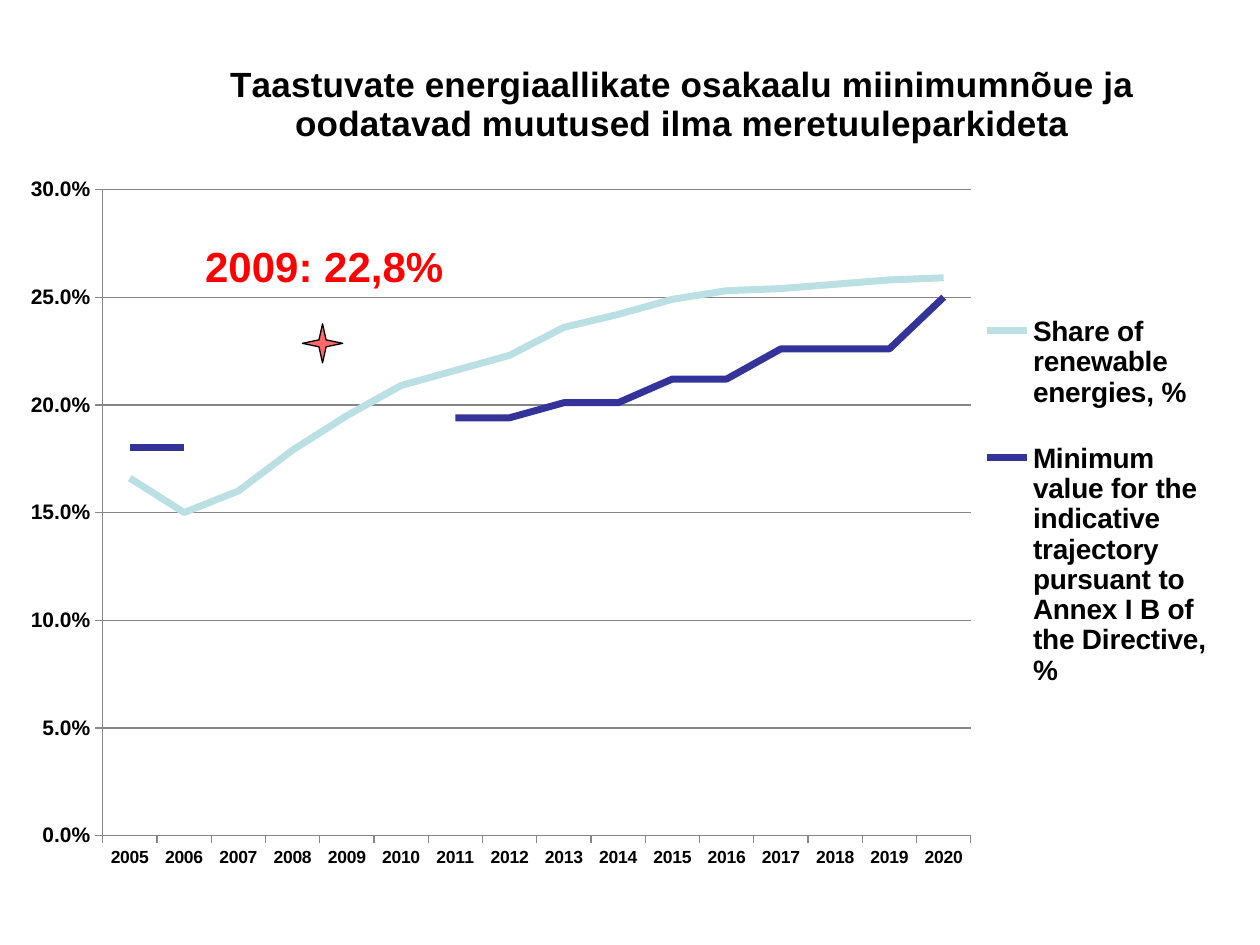
from dataclasses import dataclass

from lxml import etree
from pptx import Presentation
from pptx.chart.data import CategoryChartData
from pptx.dml.color import RGBColor
from pptx.enum.chart import XL_CHART_TYPE as ChartType
from pptx.enum.chart import XL_LEGEND_POSITION as LegendPosition
from pptx.enum.chart import XL_MARKER_STYLE as Marker
from pptx.enum.chart import XL_TICK_MARK as TickMark
from pptx.enum.shapes import MSO_SHAPE as Shape
from pptx.enum.text import MSO_AUTO_SIZE as AutoSize
from pptx.enum.text import PP_ALIGN as Align
from pptx.oxml.ns import qn
from pptx.util import Inches, Pt


@dataclass(frozen=True)
class Theme:
    font: str = "Arial"
    ink: str = "000000"
    accent: str = "FF0000"
    grid: str = "868686"
    share: str = "BBE0E3"
    minimum: str = "333399"
    title_size: int = 20
    legend_size: int = 16
    value_size: int = 12
    year_size: int = 10
    note_size: int = 24


THEME = Theme()
TITLE = ("Taastuvate energiaallikate osakaalu miinimumnõue ja "
         "oodatavad muutused ilma meretuuleparkideta")
YEARS = [str(year) for year in range(2005, 2021)]
SERIES = [
    ("Share of renewable energies, %", THEME.share,
     [0.166, 0.15, 0.16, 0.179, 0.195, 0.209, 0.216, 0.223,
      0.236, 0.242, 0.249, 0.253, 0.254, 0.256, 0.258, 0.259]),
    ("Minimum value for the indicative trajectory pursuant to "
     "Annex I B of the Directive, %", THEME.minimum,
     [0.18, 0.18, None, None, None, None, 0.194, 0.194,
      0.201, 0.201, 0.212, 0.212, 0.226, 0.226, 0.226, 0.25]),
]


def style_font(font, size, color=THEME.ink, bold=True):
    font.name = THEME.font
    font.size = Pt(size)
    font.bold = bold
    font.color.rgb = RGBColor.from_string(color)


def write_text(frame, text, size, color=THEME.ink, align=Align.CENTER):
    para = frame.paragraphs[0]
    para.alignment = align
    span = para.add_run()
    span.text = text
    style_font(span.font, size, color)


def set_layout(parent, index, x, y, w=None, h=None, inner=False):
    """Place a chart part by fractions of the chart area."""
    for old in parent.findall(qn("c:layout")):
        parent.remove(old)
    layout = etree.Element(qn("c:layout"))
    manual = etree.SubElement(layout, qn("c:manualLayout"))
    values = [("xMode", "edge"), ("yMode", "edge"),
              ("x", x), ("y", y), ("w", w), ("h", h)]
    if inner:
        values.insert(0, ("layoutTarget", "inner"))
    for tag, value in values:
        if value is not None:
            etree.SubElement(manual, qn(f"c:{tag}")).set("val", str(value))
    parent.insert(index, layout)


class SlideBuilder:
    def __init__(self, page, theme):
        self.page = page
        self.theme = theme

    def line_chart(self, at, title, categories, series):
        theme = self.theme
        data = CategoryChartData(number_format="0.0%")
        data.categories = categories
        for name, _, values in series:
            data.add_series(name, values)
        chart = self.page.shapes.add_chart(
            ChartType.LINE, *map(Inches, at), data).chart
        style_font(chart.font, theme.year_size)

        # Title
        chart.has_title = True
        write_text(chart.chart_title.text_frame, title, theme.title_size)
        chart.chart_title.include_in_layout = False
        set_layout(chart.element.find(".//" + qn("c:title")), 1, 0.164, 0)

        # Legend
        chart.has_legend = True
        chart.legend.position = LegendPosition.RIGHT
        chart.legend.include_in_layout = False
        style_font(chart.legend.font, theme.legend_size)
        set_layout(chart.element.find(".//" + qn("c:legend")), 1,
                   0.79, 0.27, 0.19, 0.53)

        # Axes
        values, years = chart.value_axis, chart.category_axis
        values.minimum_scale, values.maximum_scale = 0, 0.3
        values.major_unit = 0.05
        values.has_major_gridlines = True
        values.tick_labels.number_format = "0.0%"
        values.tick_labels.number_format_is_linked = False
        for axis, size in ((values, theme.value_size),
                           (years, theme.year_size)):
            axis.major_tick_mark = TickMark.OUTSIDE
            axis.minor_tick_mark = TickMark.NONE
            style_font(axis.tick_labels.font, size)
        for part in (values, years, values.major_gridlines):
            part.format.line.width = Pt(0.75)
            part.format.line.color.rgb = RGBColor.from_string(theme.grid)

        # Lines
        plot = chart.plots[0]
        plot.vary_by_categories = False
        for line, (_, color, _) in zip(plot.series, series):
            line.smooth = False
            line.marker.style = Marker.NONE
            line.format.line.width = Pt(4)
            line.format.line.color.rgb = RGBColor.from_string(color)
        set_layout(chart.element.find(".//" + qn("c:plotArea")), 0,
                   0.064, 0.161, 0.717, 0.776, inner=True)

    def star(self, at, opacity):
        star = self.page.shapes.add_shape(Shape.STAR_4_POINT,
                                          *map(Inches, at))
        star.shadow.inherit = False
        star.adjustments[0] = 0.125
        star.fill.solid()
        star.fill.fore_color.rgb = RGBColor.from_string(self.theme.accent)
        color = star.fill._xPr.find(".//" + qn("a:srgbClr"))
        etree.SubElement(color, qn("a:alpha")).set("val", str(opacity * 1000))
        star.line.width = Pt(0.75)
        star.line.color.rgb = RGBColor.from_string(self.theme.ink)

    def note(self, at, text):
        box = self.page.shapes.add_textbox(*map(Inches, at))
        frame = box.text_frame
        frame.word_wrap = True
        frame.auto_size = AutoSize.SHAPE_TO_FIT_TEXT
        write_text(frame, text, self.theme.note_size, self.theme.accent,
                   Align.LEFT)


def main():
    deck = Presentation()
    deck.slide_width, deck.slide_height = Inches(10), Inches(7.5)
    builder = SlideBuilder(deck.slides.add_slide(deck.slide_layouts[6]), THEME)

    # Chart, then the marker and label for 2009
    builder.line_chart((0.2, 0.44, 9.61, 6.61), TITLE, YEARS, SERIES)
    builder.star((2.4, 2.57, 0.32, 0.31), opacity=59)
    builder.note((1.53, 1.86, 2.28, 0.51), "2009: 22,8%")
    deck.save("out.pptx")


if __name__ == "__main__":
    main()
